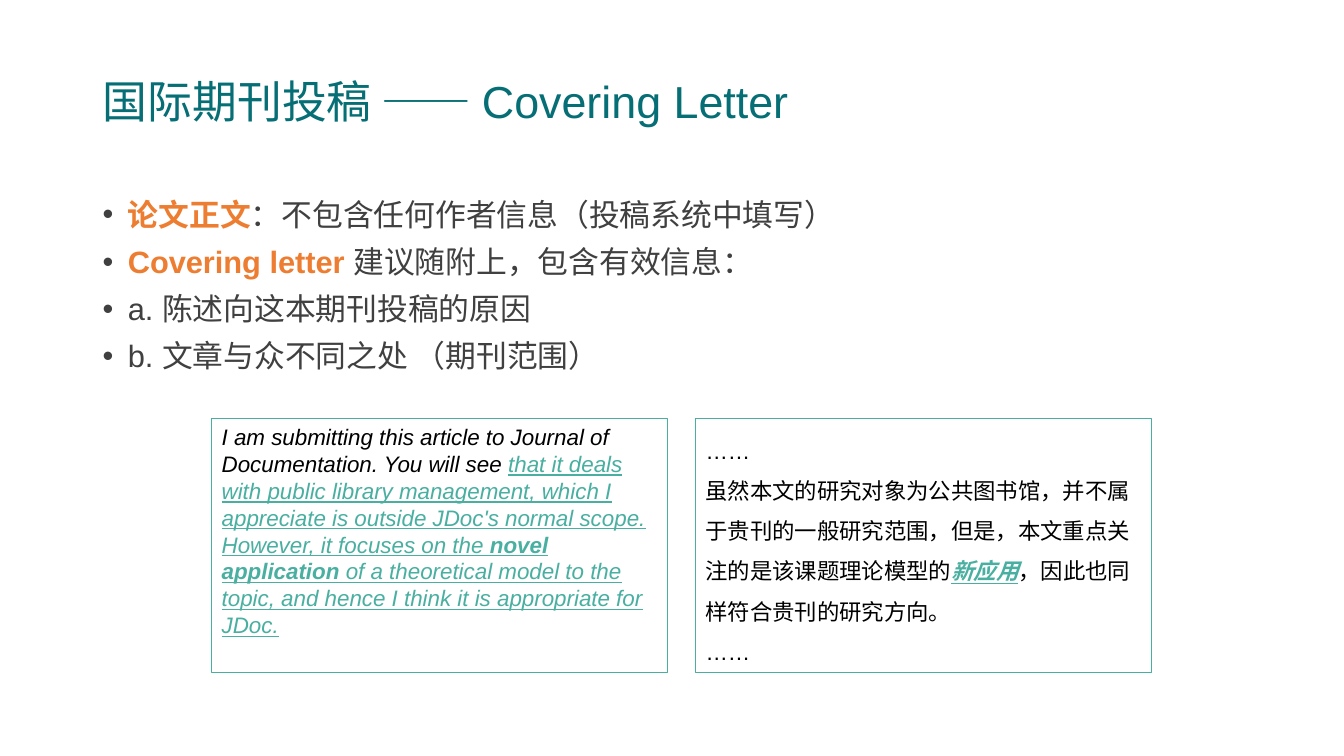
"""Build the covering letter slide on submitting to international journals."""
from lxml.etree import SubElement
from pptx import Presentation
from pptx.dml.color import RGBColor
from pptx.enum.shapes import MSO_SHAPE
from pptx.enum.text import MSO_ANCHOR, MSO_AUTO_SIZE, PP_ALIGN
from pptx.oxml.ns import qn
from pptx.util import Emu, Pt

COLORS = {
    "title": "066E75",
    "text": "404040",
    "accent": "ED7D31",
    "teal": "49AFA0",
    "black": "000000",
}
FONT = "Arial"

POINTS = [
    [("论文正文", "accent", "b"), ("：不包含任何作者信息（投稿系统中填写）", "text", "")],
    [("Covering letter ", "accent", "b"), ("建议随附上，包含有效信息：", "text", "")],
    [("a. 陈述向这本期刊投稿的原因", "text", "")],
    [("b. 文章与众不同之处 （期刊范围）", "text", "")],
]
LETTER = [[
    ("I am submitting this article to Journal of Documentation. You will see ", "black", "i"),
    ("that it deals with public library management, which I appreciate is outside "
     "JDoc's normal scope. However, it focuses on the ", "teal", "iu"),
    ("novel application ", "teal", "biu"),
    ("of a theoretical model to the topic, and hence I think it is appropriate for JDoc.",
     "teal", "iu"),
]]
TRANSLATION = [
    [("……", "black", "")],
    [("虽然本文的研究对象为公共图书馆，并不属于贵刊的一般研究范围，但是，"
      "本文重点关注的是该课题理论模型的", "black", ""),
     ("新应用", "teal", "biu"),
     ("，因此也同样符合贵刊的研究方向。", "black", "")],
    [("……", "black", "")],
]


def px(n):
    """Turn px, at 100 to the inch, into EMU."""
    return Emu(n * 9144)


def rgb(name):
    """Look up a named colour."""
    return RGBColor.from_string(COLORS[name])


def add_run(p, text, color, size, style=""):
    """Add one run, with style letters b, i and u."""
    r = p.add_run()
    r.text = text
    font = r.font
    font.name, font.size = FONT, Pt(size)
    font.color.rgb = rgb(color)
    font.bold, font.italic, font.underline = (k in style for k in "biu")


def add_bullet(p):
    """Give a paragraph a hanging round bullet."""
    pPr = p._p.get_or_add_pPr()
    pPr.set("marL", str(px(25)))
    pPr.set("indent", str(px(-25)))
    color = SubElement(pPr, qn("a:buClr"))
    SubElement(color, qn("a:srgbClr"), val=COLORS["text"])
    SubElement(pPr, qn("a:buFont"), typeface=FONT)
    SubElement(pPr, qn("a:buChar"), char="•")


def fill_text(tf, paragraphs, size, spacing, before=0, bullet=False):
    """Write paragraphs of runs into a text frame."""
    tf.word_wrap = True
    for i, runs in enumerate(paragraphs):
        p = tf.add_paragraph() if i else tf.paragraphs[0]
        p.alignment = PP_ALIGN.LEFT
        p.line_spacing = spacing
        if i:
            p.space_before = Pt(before)
        if bullet:
            add_bullet(p)
        for text, color, style in runs:
            add_run(p, text, color, size, style)


def add_title(s, text):
    """Place and format the title."""
    sp = s.shapes.title
    sp.left, sp.top, sp.width, sp.height = px(92), px(62), px(1150), px(82)
    tf = sp.text_frame
    tf.auto_size = MSO_AUTO_SIZE.NONE
    tf.vertical_anchor = MSO_ANCHOR.MIDDLE
    fill_text(tf, [[(text, "title", "")]], 32, 0.9)


def add_points(s, paragraphs):
    """Add the bulleted list."""
    sp = s.shapes.add_textbox(px(92), px(193), px(1150), px(200))
    fill_text(sp.text_frame, paragraphs, 22, 0.9, before=10, bullet=True)


def add_sample(s, left, paragraphs, spacing):
    """Add an outlined sample box."""
    sp = s.shapes.add_shape(MSO_SHAPE.RECTANGLE, px(left), px(415), px(452), px(252))
    sp.shadow.inherit = False
    sp.fill.background()
    sp.line.color.rgb = rgb("teal")
    sp.line.width = Pt(1)
    sp.text_frame.vertical_anchor = MSO_ANCHOR.TOP
    fill_text(sp.text_frame, paragraphs, 16, spacing)


def main():
    """Build and save the slide."""
    prs = Presentation()
    prs.slide_width, prs.slide_height = px(1333), px(750)
    s = prs.slides.add_slide(prs.slide_layouts[5])
    add_title(s, "国际期刊投稿 —— Covering Letter")
    add_points(s, POINTS)
    add_sample(s, 210, LETTER, 1.0)
    add_sample(s, 690, TRANSLATION, 1.5)
    prs.save("out.pptx")


if __name__ == "__main__":
    main()
